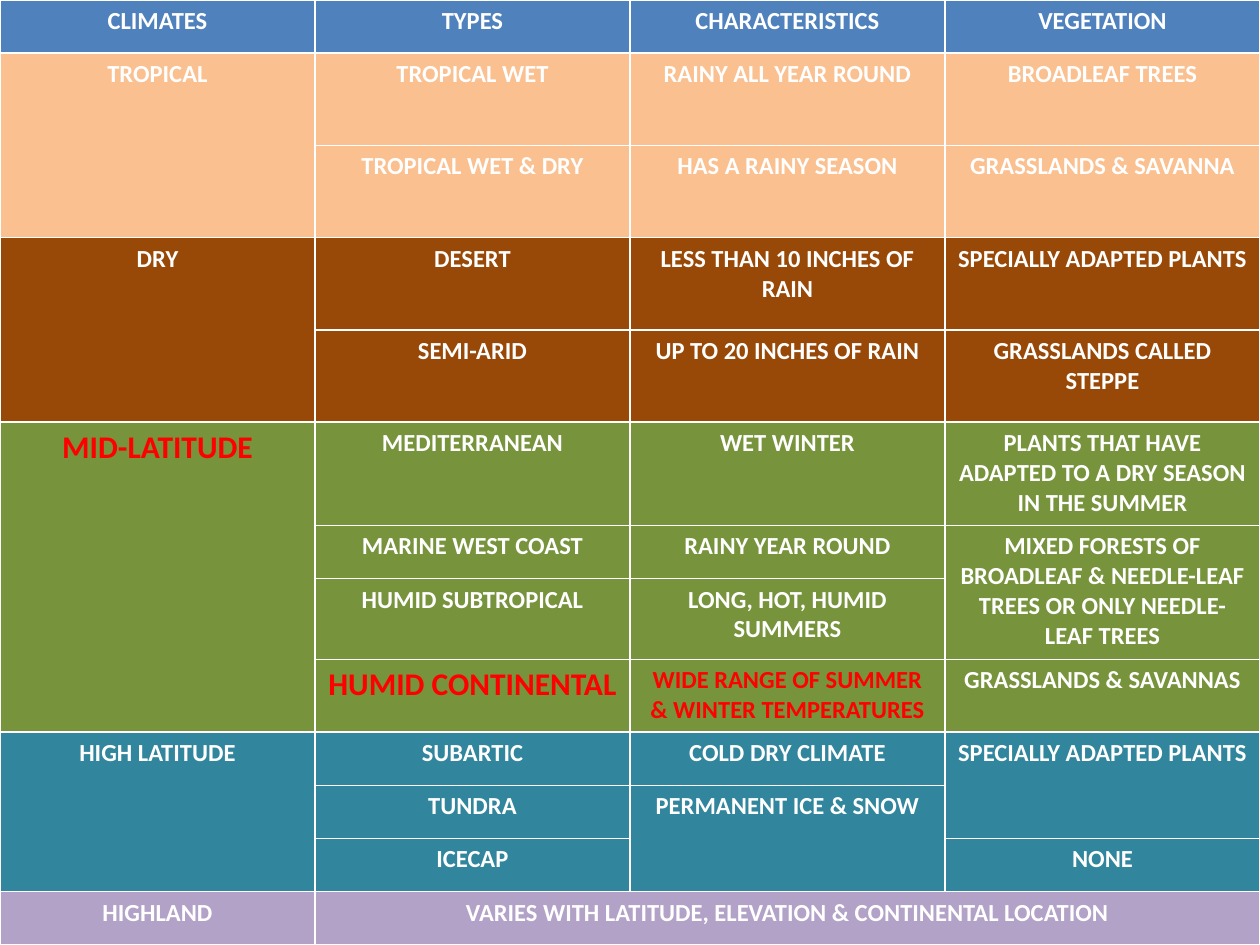
from dataclasses import dataclass

import pptx
import pptx.dml.color
import pptx.enum.text
import pptx.oxml
import pptx.oxml.ns
import pptx.table
import pptx.util

Cm = pptx.util.Cm
RGB = pptx.dml.color.RGBColor

COLORS = {
    "white": "FFFFFF",
    "red": "FF0000",
    "header": "4F81BD",
    "tropical": "FAC090",
    "dry": "984807",
    "mid": "77933C",
    "high": "31859C",
    "highland": "B3A2C7",
}
COLUMNS = 4
SHORT, TALL = 1.07, 1.86
LINE_WIDTH = pptx.util.Pt(1)


@dataclass(frozen=True)
class Entry:
    """One table cell with text and the number of rows and columns it spans."""
    text: str
    rows: int = 1
    cols: int = 1
    size: int = 14
    color: str = "white"


@dataclass(frozen=True)
class Row:
    """None marks a cell covered by a span; height is in centimetres."""
    fill: str
    height: float
    entries: tuple[Entry | None, ...]


def row(fill: str, height: float, *items: Entry | str | None) -> Row:
    entries = (Entry(i) if isinstance(i, str) else i for i in items)
    return Row(fill, height, tuple(entries))


ROWS = [
    row("header", SHORT, "CLIMATES", "TYPES", "CHARACTERISTICS", "VEGETATION"),
    row("tropical", TALL, Entry("TROPICAL", rows=2), "TROPICAL WET",
        "RAINY ALL YEAR ROUND", "BROADLEAF TREES"),
    row("tropical", TALL, None, "TROPICAL WET & DRY",
        "HAS A RAINY SEASON", "GRASSLANDS & SAVANNA"),
    row("dry", TALL, Entry("DRY", rows=2), "DESERT",
        "LESS THAN 10 INCHES OF RAIN", "SPECIALLY ADAPTED PLANTS"),
    row("dry", TALL, None, "SEMI-ARID",
        "UP TO 20 INCHES OF RAIN", "GRASSLANDS CALLED STEPPE"),
    row("mid", 2.08, Entry("MID-LATITUDE", rows=4, size=18, color="red"),
        "MEDITERRANEAN", "WET WINTER",
        "PLANTS THAT HAVE ADAPTED TO A DRY SEASON IN THE SUMMER"),
    row("mid", SHORT, None, "MARINE WEST COAST", "RAINY YEAR ROUND",
        Entry("MIXED FORESTS OF BROADLEAF & NEEDLE-LEAF TREES "
              "OR ONLY NEEDLE-LEAF TREES", rows=2)),
    row("mid", 1.63, None, "HUMID SUBTROPICAL", "LONG, HOT, HUMID SUMMERS", None),
    row("mid", 1.47, None, Entry("HUMID CONTINENTAL", size=18, color="red"),
        Entry("WIDE RANGE OF SUMMER & WINTER TEMPERATURES", color="red"),
        "GRASSLANDS & SAVANNAS"),
    row("high", SHORT, Entry("HIGH LATITUDE", rows=3), "SUBARTIC",
        "COLD DRY CLIMATE", Entry("SPECIALLY ADAPTED PLANTS", rows=2)),
    row("high", SHORT, None, "TUNDRA", Entry("PERMANENT ICE & SNOW", rows=2), None),
    row("high", SHORT, None, "ICECAP", None, "NONE"),
    row("highland", SHORT, "HIGHLAND",
        Entry("VARIES WITH LATITUDE, ELEVATION & CONTINENTAL LOCATION", cols=3),
        None, None),
]


def style_cell(cell: pptx.table._Cell, fill: str) -> None:
    """Give the cell white borders and a solid fill."""
    tc_pr = cell._tc.get_or_add_tcPr()
    for side in "LRTB":
        tc_pr.append(pptx.oxml.parse_xml(
            f'<a:ln{side} {pptx.oxml.ns.nsdecls("a")} w="{LINE_WIDTH}"><a:solidFill>'
            f'<a:srgbClr val="{COLORS["white"]}"/></a:solidFill></a:ln{side}>'))
    cell.fill.solid()
    cell.fill.fore_color.rgb = RGB.from_string(COLORS[fill])


def write_entry(cell: pptx.table._Cell, entry: Entry) -> None:
    p = cell.text_frame.paragraphs[0]
    p.alignment = pptx.enum.text.PP_ALIGN.CENTER
    r = p.add_run()
    r.text = entry.text
    font_format = {"name": "Calibri", "size": pptx.util.Pt(entry.size), "bold": True}
    for name, value in font_format.items():
        setattr(r.font, name, value)
    r.font.color.rgb = RGB.from_string(COLORS[entry.color])


def fill_table(table: pptx.table.Table, rows: list[Row]) -> None:
    for i, line in enumerate(rows):
        table.rows[i].height = Cm(line.height)
        for j, entry in enumerate(line.entries):
            cell = table.cell(i, j)
            style_cell(cell, line.fill)
            if entry is None:
                continue
            write_entry(cell, entry)
            if entry.rows > 1 or entry.cols > 1:
                cell.merge(table.cell(i + entry.rows - 1, j + entry.cols - 1))


def main() -> None:
    prs = pptx.Presentation()
    prs.slide_width, prs.slide_height = Cm(25.4), Cm(19.05)
    s = prs.slides.add_slide(prs.slide_layouts.get_by_name("Blank"))
    frame = s.shapes.add_table(len(ROWS), COLUMNS, Cm(0), Cm(0),
                               prs.slide_width, prs.slide_height)
    fill_table(frame.table, ROWS)
    prs.save("out.pptx")


if __name__ == "__main__":
    main()
